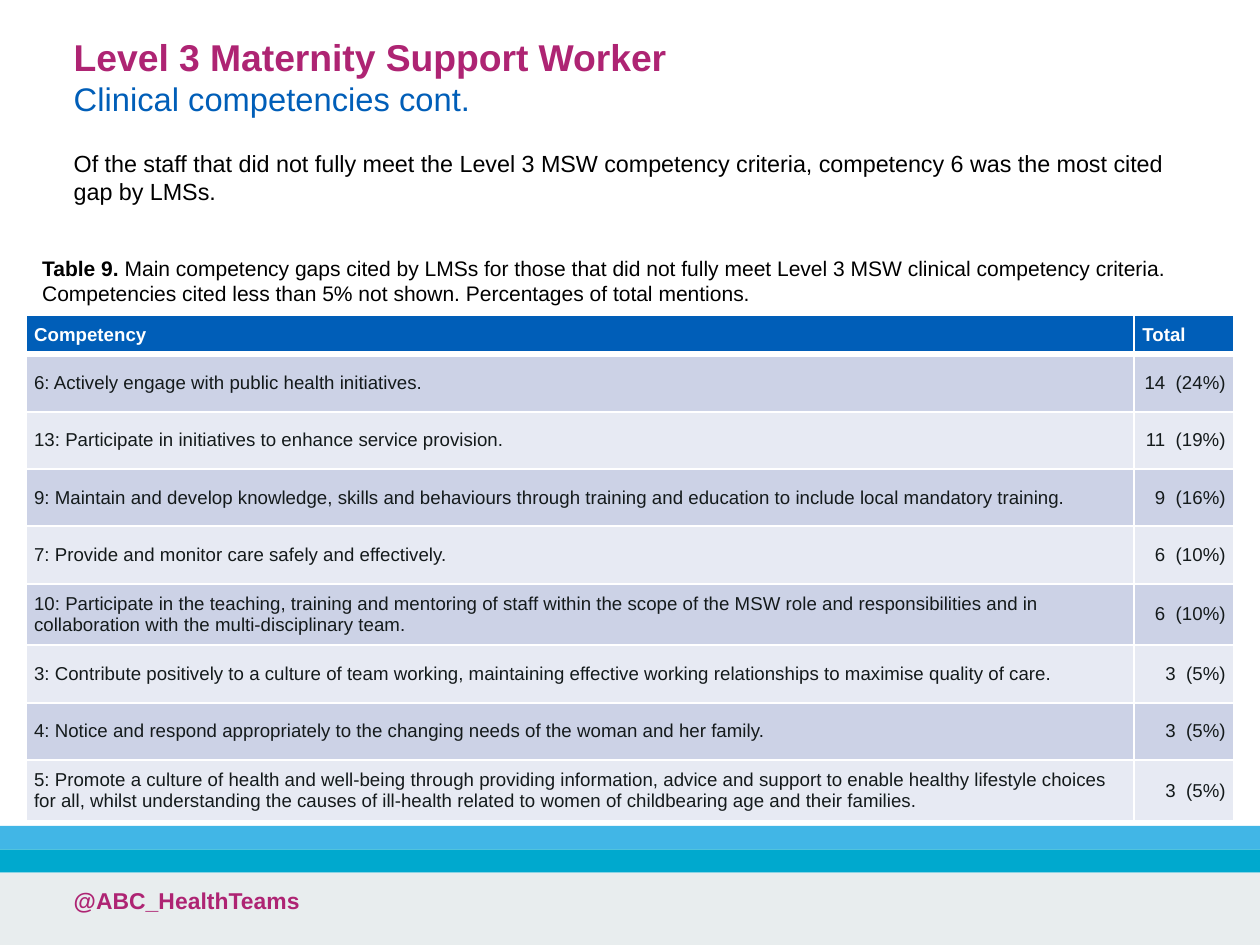
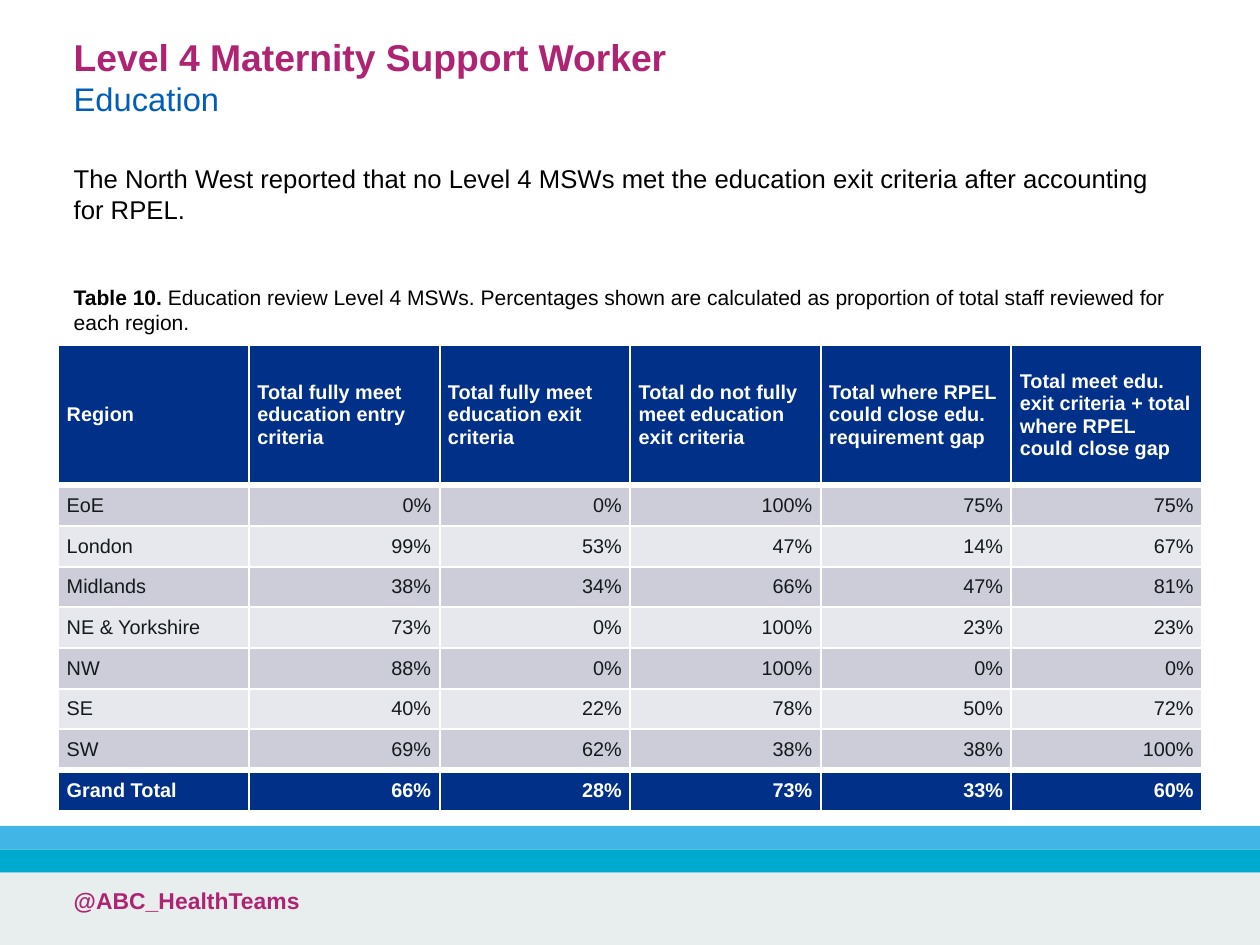
from lxml.etree import SubElement
from pptx import Presentation
from pptx.dml.color import RGBColor
from pptx.enum.shapes import MSO_SHAPE as Preset
from pptx.enum.text import MSO_ANCHOR as Anchor, PP_ALIGN as Align
from pptx.oxml.ns import qn
from pptx.util import Pt

FONT = "Arial"
PLUM, BLUE, NAVY = "AE2473", "005EB8", "003087"
WHITE, BLACK, INK = "FFFFFF", "000000", "141A1B"
SLIDE_WIDTH, SLIDE_HEIGHT = 540, 405
MARGIN, CONTENT_WIDTH = 24.5, 490.3
BANDS = [(354, 10, "41B6E6"), (364, 10, "00A9CE"), (374, 31, "E8EDEE")]
HANDLE = "@ABC_HealthTeams"
CELL_INSET = 3.6
THIN, THICK = 1, 3

COMPETENCY_ROWS = [
    ("Competency", "Total"),
    ("6: Actively engage with public health initiatives.", "14  (24%)"),
    ("13: Participate in initiatives to enhance service provision.", "11  (19%)"),
    ("9: Maintain and develop knowledge, skills and behaviours through training "
     "and education to include local mandatory training.", "9  (16%)"),
    ("7: Provide and monitor care safely and effectively.", "6  (10%)"),
    ("10: Participate in the teaching, training and mentoring of staff within "
     "the scope of the MSW role and responsibilities and in collaboration with "
     "the multi-disciplinary team.", "6  (10%)"),
    ("3: Contribute positively to a culture of team working, maintaining "
     "effective working relationships to maximise quality of care.", "3  (5%)"),
    ("4: Notice and respond appropriately to the changing needs of the woman "
     "and her family.", "3  (5%)"),
    ("5: Promote a culture of health and well-being through providing "
     "information, advice and support to enable healthy lifestyle choices for "
     "all, whilst understanding the causes of ill-health related to women of "
     "childbearing age and their families.", "3  (5%)"),
]

EDUCATION_ROWS = [
    ("Region", "Total fully meet education entry criteria",
     "Total fully meet education exit criteria",
     "Total do not fully meet education exit criteria",
     "Total where RPEL could close edu. requirement gap",
     "Total meet edu. exit criteria + total where RPEL could close gap"),
    ("EoE", "0%", "0%", "100%", "75%", "75%"),
    ("London", "99%", "53%", "47%", "14%", "67%"),
    ("Midlands", "38%", "34%", "66%", "47%", "81%"),
    ("NE & Yorkshire", "73%", "0%", "100%", "23%", "23%"),
    ("NW", "88%", "0%", "100%", "0%", "0%"),
    ("SE", "40%", "22%", "78%", "50%", "72%"),
    ("SW", "69%", "62%", "38%", "38%", "100%"),
    ("Grand Total", "66%", "28%", "73%", "33%", "60%"),
]


def rgb(value):
    return RGBColor.from_string(value)


def write(paragraph, text, size=10, color=BLACK, bold=False, align=Align.LEFT):
    paragraph.alignment = align
    run = paragraph.add_run()
    run.text = text
    run.font.name = FONT
    run.font.size = Pt(size)
    run.font.bold = bold
    run.font.color.rgb = rgb(color)


def add_text_frame(slide, top, height, left=MARGIN, width=CONTENT_WIDTH):
    frame = slide.shapes.add_textbox(Pt(left), Pt(top), Pt(width), Pt(height)).text_frame
    frame.word_wrap = True
    return frame


def add_band(slide, top, height, color):
    band = slide.shapes.add_shape(
        Preset.RECTANGLE, Pt(0), Pt(top), Pt(SLIDE_WIDTH), Pt(height))
    band.shadow.inherit = False
    band.fill.solid()
    band.fill.fore_color.rgb = rgb(color)
    band.line.fill.background()


def add_page(deck, title, subtitle):
    slide = deck.slides.add_slide(deck.slide_layouts[6])
    for top, height, color in BANDS:
        add_band(slide, top, height, color)
    footer = add_text_frame(slide, 376.6, 28.4, width=315)
    write(footer.paragraphs[0], HANDLE, size=9.8, color=PLUM, bold=True)
    heading = add_text_frame(slide, 11, 44)
    write(heading.paragraphs[0], title, size=16, color=PLUM, bold=True)
    write(heading.add_paragraph(), subtitle, size=14, color=BLUE)
    return slide


def add_statement(slide, text, top, height, size):
    write(add_text_frame(slide, top, height).paragraphs[0], text, size=size)


def add_caption(slide, label, text, top, left=MARGIN, width=CONTENT_WIDTH):
    caption = add_text_frame(slide, top, 29, left, width).paragraphs[0]
    write(caption, label, size=9, bold=True)
    write(caption, text, size=9)


def set_borders(cell, top, bottom):
    properties = cell._tc.get_or_add_tcPr()
    for side, weight in (("L", THIN), ("R", THIN), ("T", top), ("B", bottom)):
        border = SubElement(properties, qn(f"a:ln{side}"), w=str(Pt(weight)))
        fill = SubElement(border, qn("a:solidFill"))
        SubElement(fill, qn("a:srgbClr"), val=WHITE)


def add_data_table(slide, rows, left, top, widths, heights, size, accent, stripes,
                   total_row=False):
    table = slide.shapes.add_table(
        len(rows), len(widths), Pt(left), Pt(top),
        Pt(sum(widths)), Pt(sum(heights))).table
    table.last_row = total_row
    for column, width in zip(table.columns, widths):
        column.width = Pt(width)
    last = len(rows) - 1
    strong_rows = {0, last} if total_row else {0}
    thick_edges = {1, last} if total_row else {1}
    for i, (row, height) in enumerate(zip(rows, heights)):
        table.rows[i].height = Pt(height)
        strong = i in strong_rows
        for j, text in enumerate(row):
            cell = table.cell(i, j)
            set_borders(cell, THICK if i in thick_edges else THIN,
                        THICK if i + 1 in thick_edges else THIN)
            cell.fill.solid()
            cell.fill.fore_color.rgb = rgb(accent if strong else stripes[(i - 1) % 2])
            cell.vertical_anchor = Anchor.MIDDLE
            cell.margin_left = cell.margin_right = Pt(CELL_INSET)
            cell.margin_top = cell.margin_bottom = Pt(CELL_INSET)
            write(cell.text_frame.paragraphs[0], text, size=size, bold=strong,
                  color=WHITE if strong else INK,
                  align=Align.RIGHT if i and j else Align.LEFT)


def add_competencies(deck):
    slide = add_page(deck, "Level 3 Maternity Support Worker", "Clinical competencies cont.")
    add_statement(slide, "Of the staff that did not fully meet the Level 3 MSW competency "
                  "criteria, competency 6 was the most cited gap by LMSs.", 60.5, 38, 10)
    left, widths = 11, [475, 43]
    add_caption(slide, "Table 9. ", "Main competency gaps cited by LMSs for those that did "
                "not fully meet Level 3 MSW clinical competency criteria. Competencies cited "
                "less than 5% not shown. Percentages of total mentions.",
                106, left, sum(widths))
    add_data_table(slide, COMPETENCY_ROWS, left, 135, widths, [16] + [24.6] * 8,
                   8, BLUE, ("CCD2E6", "E7EAF3"))


def add_education(deck):
    slide = add_page(deck, "Level 4 Maternity Support Worker", "Education")
    add_statement(slide, "The North West reported that no Level 4 MSWs met the education "
                  "exit criteria after accounting for RPEL.", 66.2, 29, 11)
    add_caption(slide, "Table 10. ", "Education review Level 4 MSWs. Percentages shown are "
                "calculated as proportion of total staff reviewed for each region.", 118.4)
    add_data_table(slide, EDUCATION_ROWS, MARGIN + 0.5, 147.8, [CONTENT_WIDTH / 6] * 6,
                   [60.2] + [17.4] * 8, 8.5, NAVY, ("CCCDD9", "E7E8ED"), total_row=True)


def main():
    deck = Presentation()
    deck.slide_width, deck.slide_height = Pt(SLIDE_WIDTH), Pt(SLIDE_HEIGHT)
    add_competencies(deck)
    add_education(deck)
    deck.save("out.pptx")


if __name__ == "__main__":
    main()
